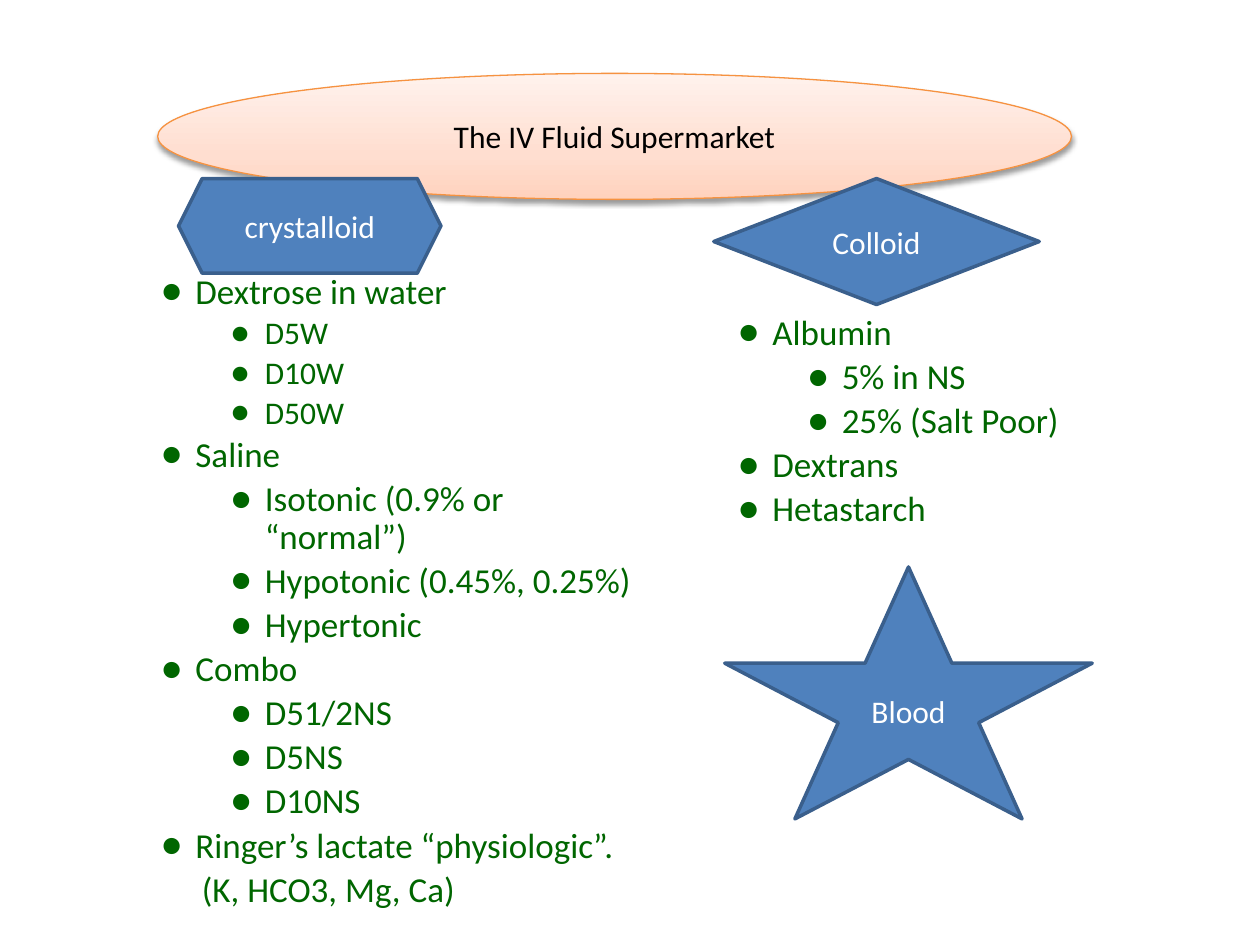
from copy import deepcopy
from typing import NamedTuple

from lxml.etree import SubElement
from pptx import Presentation
from pptx.dml.color import RGBColor
from pptx.enum.shapes import MSO_SHAPE
from pptx.enum.text import MSO_ANCHOR, PP_ALIGN
from pptx.oxml.ns import qn
from pptx.util import Cm, Pt

GREEN = RGBColor(0x00, 0x66, 0x00)
BLUE = RGBColor(0x4F, 0x81, 0xBD)
DARK_BLUE = RGBColor(0x3A, 0x5F, 0x8C)
ORANGE = RGBColor(0xF6, 0x92, 0x40)
BLACK = RGBColor(0x00, 0x00, 0x00)
WHITE = RGBColor(0xFF, 0xFF, 0xFF)
PEACH_STOPS = [
    (0, RGBColor(0xFF, 0xD2, 0xBD)),
    (0.35, RGBColor(0xFF, 0xDE, 0xD0)),
    (1, RGBColor(0xFF, 0xF2, 0xED)),
]
FONT = "Calibri"


class Box(NamedTuple):
    """Left, top, width and height in centimetres."""
    left: float
    top: float
    width: float
    height: float

    def lengths(self):
        return [Cm(value) for value in self]


class Sign(NamedTuple):
    label: str
    outline: MSO_SHAPE
    box: Box


class Item(NamedTuple):
    text: str
    level: int = 1
    size: int = 20
    bullet: bool = True


class FluidList(NamedTuple):
    box: Box
    items: list[Item]


TITLE = Sign("The IV Fluid Supermarket", MSO_SHAPE.OVAL, Box(3.18, 1.48, 18.42, 2.54))
CATEGORIES = [
    Sign("crystalloid", MSO_SHAPE.HEXAGON, Box(3.6, 3.6, 5.29, 1.91)),
    Sign("Colloid", MSO_SHAPE.DIAMOND, Box(14.39, 3.6, 6.56, 2.54)),
    Sign("Blood", MSO_SHAPE.STAR_5_POINT, Box(14.61, 11.43, 7.41, 5.08)),
]
LISTS = [
    FluidList(Box(1.91, 5.4, 11.35, 13.3), [
        Item("Dextrose in water"),
        Item("D5W", 2, 18),
        Item("D10W", 2, 18),
        Item("D50W", 2, 18),
        Item("Saline"),
        Item("Isotonic (0.9% or “normal”)", 2),
        Item("Hypotonic (0.45%, 0.25%)", 2),
        Item("Hypertonic", 2),
        Item("Combo"),
        Item("D51/2NS", 2),
        Item("D5NS", 2),
        Item("D10NS", 2),
        Item("Ringer’s lactate “physiologic”."),
        Item("(K, HCO3, Mg, Ca)", bullet=False),
    ]),
    FluidList(Box(13.54, 6.23, 10.52, 4.6), [
        Item("Albumin"),
        Item("5% in NS", 2),
        Item("25% (Salt Poor)", 2),
        Item("Dextrans"),
        Item("Hetastarch"),
    ]),
]
INDENTS = {1: Cm(1.78), 2: Cm(3.18)}
HANGING = Cm(0.69)
UNBULLETED_INDENT = Cm(1.91)


def add_run(paragraph, text: str, size: int, color: RGBColor) -> None:
    run = paragraph.add_run()
    run.text = text
    run.font.name = FONT
    run.font.size = Pt(size)
    run.font.color.rgb = color


def add_list(slide, fluids: FluidList) -> None:
    frame = slide.shapes.add_textbox(*fluids.box.lengths()).text_frame
    frame.word_wrap = True
    for index, item in enumerate(fluids.items):
        paragraph = frame.add_paragraph() if index else frame.paragraphs[0]
        paragraph.level = item.level
        paragraph.line_spacing = 0.9
        paragraph.space_before = Pt(item.size * 0.18 if index else 0)
        properties = paragraph._p.get_or_add_pPr()
        if item.bullet:
            properties.set("marL", str(INDENTS[item.level]))
            properties.set("indent", str(-HANGING))
            SubElement(properties, qn("a:buFont"), typeface=FONT)
            SubElement(properties, qn("a:buChar"), char="●")
        else:
            properties.set("marL", str(UNBULLETED_INDENT))
            properties.set("indent", "0")
            SubElement(properties, qn("a:buNone"))
        add_run(paragraph, item.text, item.size, GREEN)


def add_sign(slide, sign: Sign, line: RGBColor, weight: float, text: RGBColor):
    shape = slide.shapes.add_shape(sign.outline, *sign.box.lengths())
    shape.shadow.inherit = False
    shape.fill.solid()
    shape.fill.fore_color.rgb = BLUE
    shape.line.color.rgb = line
    shape.line.width = Pt(weight)
    frame = shape.text_frame
    frame.word_wrap = True
    frame.vertical_anchor = MSO_ANCHOR.MIDDLE
    paragraph = frame.paragraphs[0]
    paragraph.alignment = PP_ALIGN.CENTER
    add_run(paragraph, sign.label, 18, text)
    return shape


def add_title(slide) -> None:
    oval = add_sign(slide, TITLE, ORANGE, 0.75, BLACK)

    # Three-stop gradient, lightest at the top
    oval.fill.gradient()
    oval.fill.gradient_angle = 90
    stop_list = oval._element.spPr.find(".//" + qn("a:gsLst"))
    stop_list.append(deepcopy(stop_list[-1]))
    for stop, (position, color) in zip(oval.fill.gradient_stops, PEACH_STOPS):
        stop.position = position
        stop.color.rgb = color

    # Soft shadow below
    effects = oval._element.spPr.find(qn("a:effectLst"))
    shadow = SubElement(effects, qn("a:outerShdw"), blurRad=str(Pt(3.1)),
                        dist=str(Pt(1.6)), dir="5400000", rotWithShape="0")
    color = SubElement(shadow, qn("a:srgbClr"), val=str(BLACK))
    SubElement(color, qn("a:alpha"), val="38000")


def main() -> None:
    presentation = Presentation()
    presentation.slide_width = Cm(25.4)
    presentation.slide_height = Cm(19.05)
    slide = presentation.slides.add_slide(presentation.slide_layouts[6])

    # Fluids on offer
    for fluids in LISTS:
        add_list(slide, fluids)

    # Supermarket sign and its departments
    add_title(slide)
    for category in CATEGORIES:
        add_sign(slide, category, DARK_BLUE, 2, WHITE)

    presentation.save("out.pptx")


if __name__ == "__main__":
    main()
